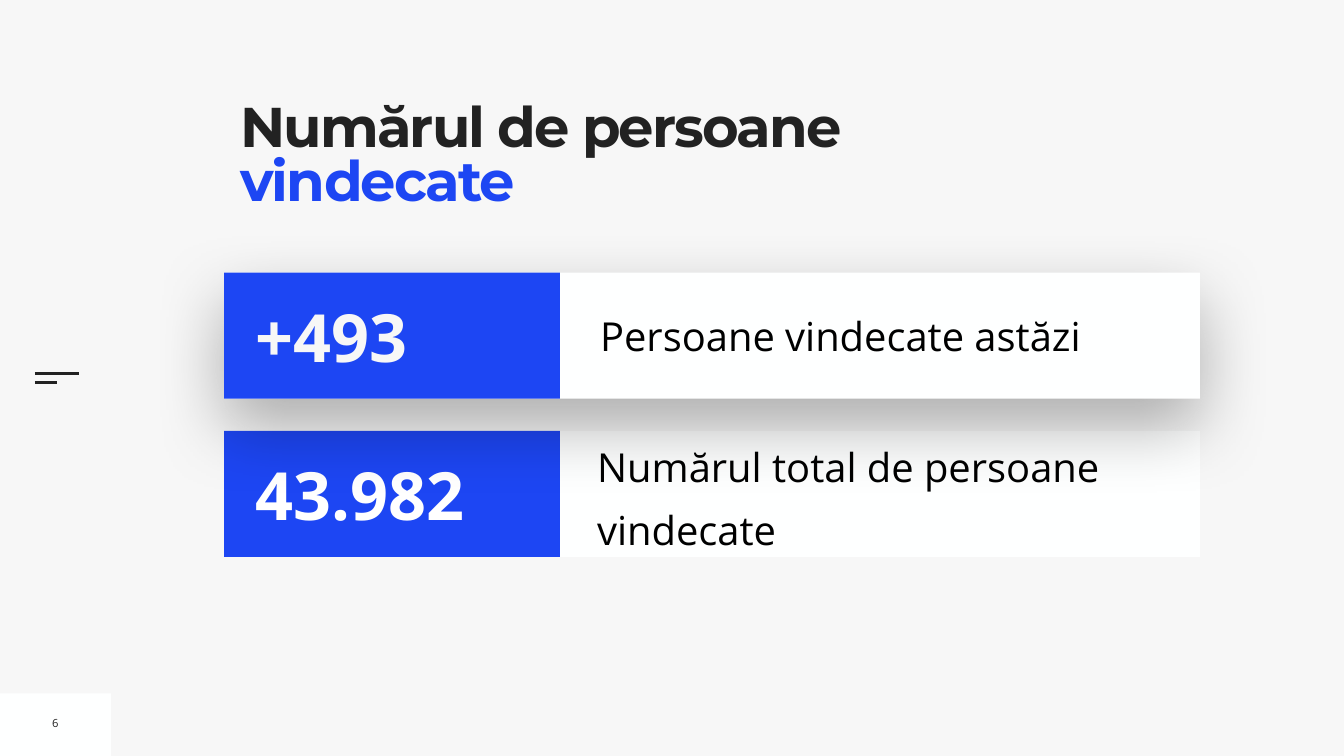
from dataclasses import dataclass

from lxml import etree
from pptx import Presentation, util as u
from pptx.dml.color import RGBColor
from pptx.enum import shapes, text
from pptx.oxml.ns import qn

PX = 9144  # EMU per px, 100 px to the inch


@dataclass(frozen=True)
class Theme:
    background: str = "F7F7F7"
    panel: str = "FEFFFF"
    accent: str = "1D46F3"
    ink: str = "222222"
    black: str = "000000"
    white: str = "FFFFFF"
    heading_font: str = "Montserrat"
    body_font: str = "Open Sans"
    title_size: int = 80
    figure_size: int = 95
    label_size: int = 57
    page_size: int = 16


THEME = Theme()


def px(*lengths):
    return [u.Emu(length * PX) for length in lengths]


def fill(part, color):
    part.fill.solid()
    part.fill.fore_color.rgb = RGBColor.from_string(color)


def set_frame(frame, inset=0, **formats):
    sides = ("margin_left", "margin_top", "margin_right", "margin_bottom")
    values = dict.fromkeys(sides, px(inset)[0]) | {"word_wrap": True} | formats
    for name, value in values.items():
        setattr(frame, name, value)


def add_run(paragraph, words, color, size, font=THEME.body_font, bold=False):
    run = paragraph.add_run()
    run.text = words
    formats = {"name": font, "size": u.Pt(size), "bold": bold}
    for name, value in formats.items():
        setattr(run.font, name, value)
    run.font.color.rgb = RGBColor.from_string(color)
    return run


def add_panel(parent, box, color):
    panel = parent.add_shape(shapes.MSO_SHAPE.RECTANGLE, *px(*box))
    panel.shadow.inherit = False
    fill(panel, color)
    panel.line.fill.background()
    return panel


def add_text(parent, box, words, color, size, bold=False, inset=10, wrap=True):
    frame = parent.add_textbox(*px(*box)).text_frame
    set_frame(frame, inset, word_wrap=wrap,
              vertical_anchor=text.MSO_ANCHOR.MIDDLE,
              auto_size=text.MSO_AUTO_SIZE.SHAPE_TO_FIT_TEXT)
    paragraph = frame.paragraphs[0]
    add_run(paragraph, words, color, size, bold=bold)
    return paragraph


def add_soft_shadow(panel):
    effects = panel._element.spPr.find(qn("a:effectLst"))
    shadow = etree.SubElement(
        effects, qn("a:outerShdw"), blurRad=str(u.Pt(100)),
        dist=str(u.Pt(40)), dir=str(90 * 60000), rotWithShape="0")
    color = etree.SubElement(shadow, qn("a:srgbClr"), val=THEME.black)
    etree.SubElement(color, qn("a:alpha"), val="30000")


def add_margin(slide, left, top, width, height):
    """Menu mark at the left edge and page number in the corner."""
    corner_height = 124
    corner_top = top + height - corner_height
    add_panel(slide.shapes, (left, corner_top, width, corner_height), THEME.panel)

    # Menu mark: a long line over a short one
    for line_top, length in ((741, 88), (759, 44)):
        y = top + line_top
        mark = slide.shapes.add_connector(
            shapes.MSO_CONNECTOR.STRAIGHT,
            *px(left + 69, y, left + 69 + length, y))
        mark.line.color.rgb = RGBColor.from_string(THEME.ink)
        mark.line.width = u.Pt(3)
        etree.SubElement(mark._element.spPr, qn("a:effectLst"))

    # Page number
    page = add_text(slide.shapes, (left + 93, corner_top + 33, 34, 51), "6",
                    THEME.ink, THEME.page_size, wrap=False)
    page.alignment = text.PP_ALIGN.CENTER


def add_title(slide, left, top, width, height):
    title = slide.shapes.title
    title.left, title.top, title.width, title.height = px(left, top, width, height)
    fill(title, THEME.background)
    set_frame(title.text_frame, vertical_anchor=text.MSO_ANCHOR.TOP,
              auto_size=text.MSO_AUTO_SIZE.NONE)
    heading = title.text_frame.paragraphs[0]
    heading.alignment = text.PP_ALIGN.LEFT
    heading.line_spacing = 0.8
    for words, color in (("Numărul de persoane ", THEME.ink),
                         ("vindecate", THEME.accent)):
        run = add_run(heading, words, color, THEME.title_size,
                      THEME.heading_font, bold=True)
        run.font._element.set("spc", "-270")


def add_figure_row(slide, left, top, width, height, figure, figure_color):
    """Card with a large figure on the accent colour; returns its group and panel."""
    row = slide.shapes.add_group_shape().shapes
    panel = add_panel(row, (left, top, width, height), THEME.panel)
    add_panel(row, (left, top, 666, height), THEME.accent)
    add_text(row, (left + 53, top + 35, 603, 180), figure, figure_color,
             THEME.figure_size, bold=True)
    return row, panel


def add_total_row(slide, left, top, width, height):
    row, _ = add_figure_row(slide, left, top, width, height, "43.982", THEME.white)
    label = add_text(row, (left + 740, top + 1, 1195, 236),
                     "Numărul total de persoane vindecate",
                     THEME.black, THEME.label_size, inset=0)
    label.line_spacing = 1.3
    label.space_before = u.Pt(20)


def add_today_row(slide, left, top, width, height):
    row, panel = add_figure_row(slide, left, top, width, height, "+493",
                                THEME.background)
    add_soft_shadow(panel)
    add_text(row, (left + 736, top + 66, 1176, 116), "Persoane vindecate astăzi",
             THEME.black, THEME.label_size)


def main():
    deck = Presentation()
    deck.slide_width, deck.slide_height = px(2667, 1500)
    slide = deck.slides.add_slide(deck.slide_layouts[5])
    fill(slide.background, THEME.background)

    add_margin(slide, 0, 0, 220, 1500)
    add_title(slide, 477, 207, 1301, 273)

    # The raised card for today comes last, so its shadow falls on the total
    left, top, width, height, gap = 445, 541, 1936, 250, 64
    add_total_row(slide, left, top + height + gap, width, height)
    add_today_row(slide, left, top, width, height)

    deck.save("out.pptx")


if __name__ == "__main__":
    main()
